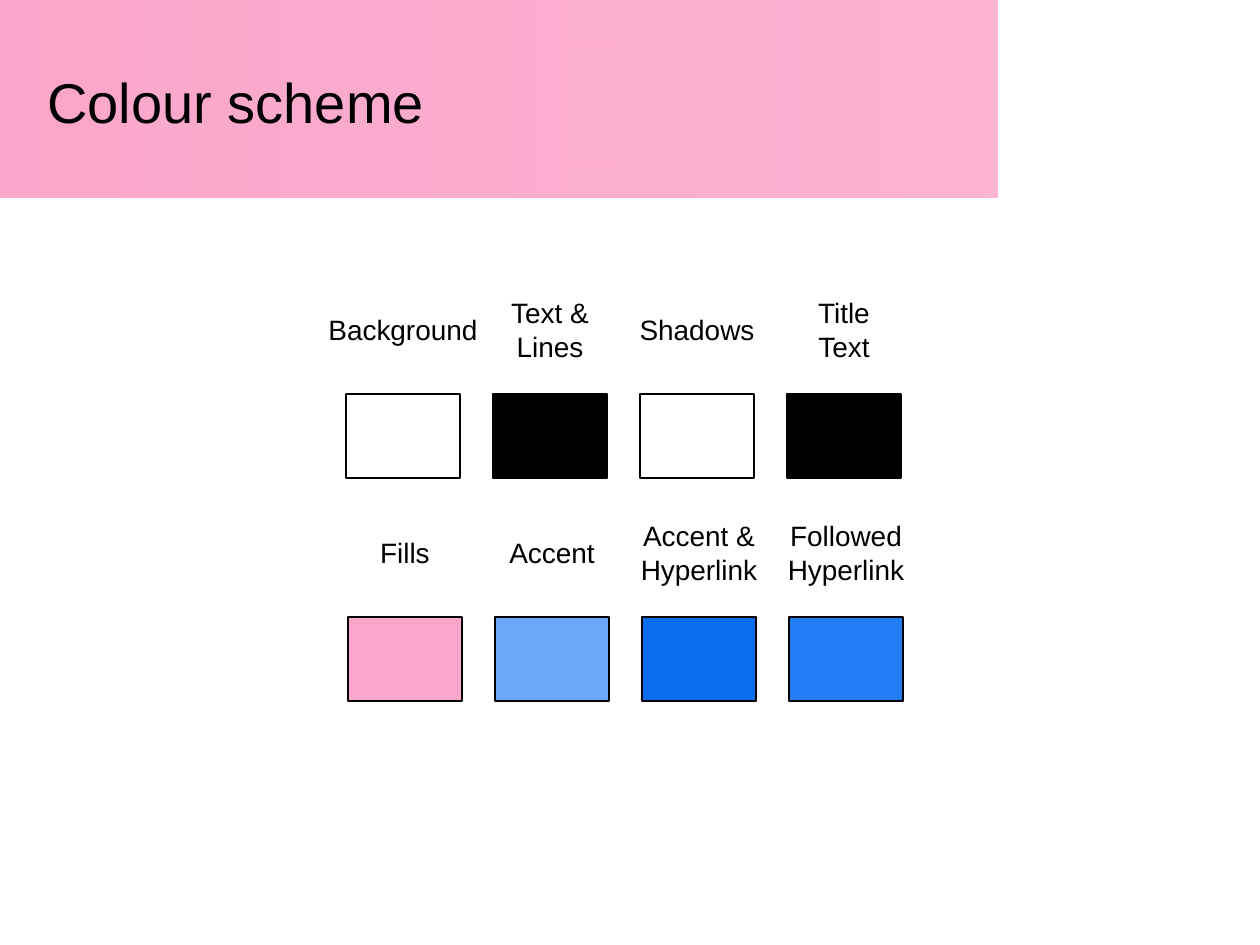
from dataclasses import dataclass

from lxml import etree
from pptx import Presentation
from pptx import util as u
from pptx.dml.color import RGBColor
from pptx.enum import shapes, text
from pptx.oxml import ns

PX = 914400 / 126  # EMU per px


@dataclass(frozen=True)
class Theme:
    font: str = "Arial"
    title_size: int = 32
    label_size: int = 16
    line_width: float = 0.75
    ink: str = "000000"
    paper: str = "FFFFFF"
    pink: str = "FBA7CB"
    light_blue: str = "6BA7F8"
    blue: str = "0B6DEF"
    mid_blue: str = "237DF5"
    band_end_alpha: int = 85


def emu(*lengths):
    return [u.Emu(round(n * PX)) for n in lengths]


def write_text(tf, content, *, font, size, color, align=text.PP_ALIGN.LEFT):
    """Newlines start paragraphs; vertical tabs break lines within one."""
    for i, line in enumerate(content.split("\n")):
        p = tf.paragraphs[0] if i == 0 else tf.add_paragraph()
        p.text = line
        p.alignment = align
        for r in p.runs:
            r.font.name = font
            r.font.size = u.Pt(size)
            r.font.color.rgb = RGBColor.from_string(color)


class Deck:
    def __init__(self, prs, theme):
        self.theme = theme
        self.s = prs.slides.add_slide(prs.slide_layouts[6])

    def rect(self, x, y, w, h):
        sp = self.s.shapes.add_shape(
            shapes.MSO_SHAPE.RECTANGLE, *emu(x, y, w, h))
        sp.shadow.inherit = False
        return sp

    def band(self, x, y, w, h):
        sp = self.rect(x, y, w, h)
        sp.line.fill.background()
        sp.fill.gradient()
        sp.fill.gradient_angle = 0
        for stop in sp.fill.gradient_stops:
            stop.color.rgb = RGBColor.from_string(self.theme.pink)
        # The right end is slightly transparent
        end = list(sp._element.spPr.iter(ns.qn("a:srgbClr")))[-1]
        alpha = etree.SubElement(end, ns.qn("a:alpha"))
        alpha.set("val", str(self.theme.band_end_alpha * 1000))

    def swatch(self, x, y, w, h, color):
        sp = self.rect(x, y, w, h)
        sp.fill.solid()
        sp.fill.fore_color.rgb = RGBColor.from_string(color)
        sp.line.color.rgb = RGBColor.from_string(self.theme.ink)
        sp.line.width = u.Pt(self.theme.line_width)

    def title(self, x, y, w, h, content):
        tf = self.s.shapes.add_textbox(*emu(x, y, w, h)).text_frame
        tf.word_wrap = True
        tf.vertical_anchor = text.MSO_ANCHOR.MIDDLE
        write_text(tf, content, font=self.theme.font,
                   size=self.theme.title_size, color=self.theme.ink)

    def label(self, center_x, center_y, w, content):
        h = 81 if len(content.splitlines()) > 1 else 47
        box = self.s.shapes.add_textbox(
            *emu(center_x - w / 2, center_y - h / 2, w, h))
        tf = box.text_frame
        tf.word_wrap = False
        tf.auto_size = text.MSO_AUTO_SIZE.SHAPE_TO_FIT_TEXT
        write_text(tf, content, font=self.theme.font,
                   size=self.theme.label_size, color=self.theme.ink,
                   align=text.PP_ALIGN.CENTER)


def main():
    prs = Presentation()
    prs.slide_width, prs.slide_height = emu(1260, 945)
    theme = Theme()
    deck = Deck(prs, theme)

    # Header
    deck.band(0, 0, 998, 198)
    deck.title(35, 38, 942, 127, "Colour scheme")

    # Swatch rows: left, top, then (label, label width, colour)
    rows = [
        (346, 394, [("Background", 178, theme.paper),
                    ("Text &\nLines", 108, theme.ink),
                    ("Shadows", 144, theme.paper),
                    ("Title\vText", 82, theme.ink)]),
        (348, 617, [("Fills", 78, theme.pink),
                    ("Accent", 114, theme.light_blue),
                    ("Accent &\nHyperlink", 145, theme.blue),
                    ("Followed\nHyperlink", 145, theme.mid_blue)]),
    ]
    pitch, width, height, label_rise = 147, 114, 84, 64
    for left, top, entries in rows:
        for col, (name, label_width, color) in enumerate(entries):
            x = left + col * pitch
            deck.swatch(x, top, width, height, color)
            deck.label(x + width / 2, top - label_rise, label_width, name)

    prs.save("out.pptx")


if __name__ == "__main__":
    main()
